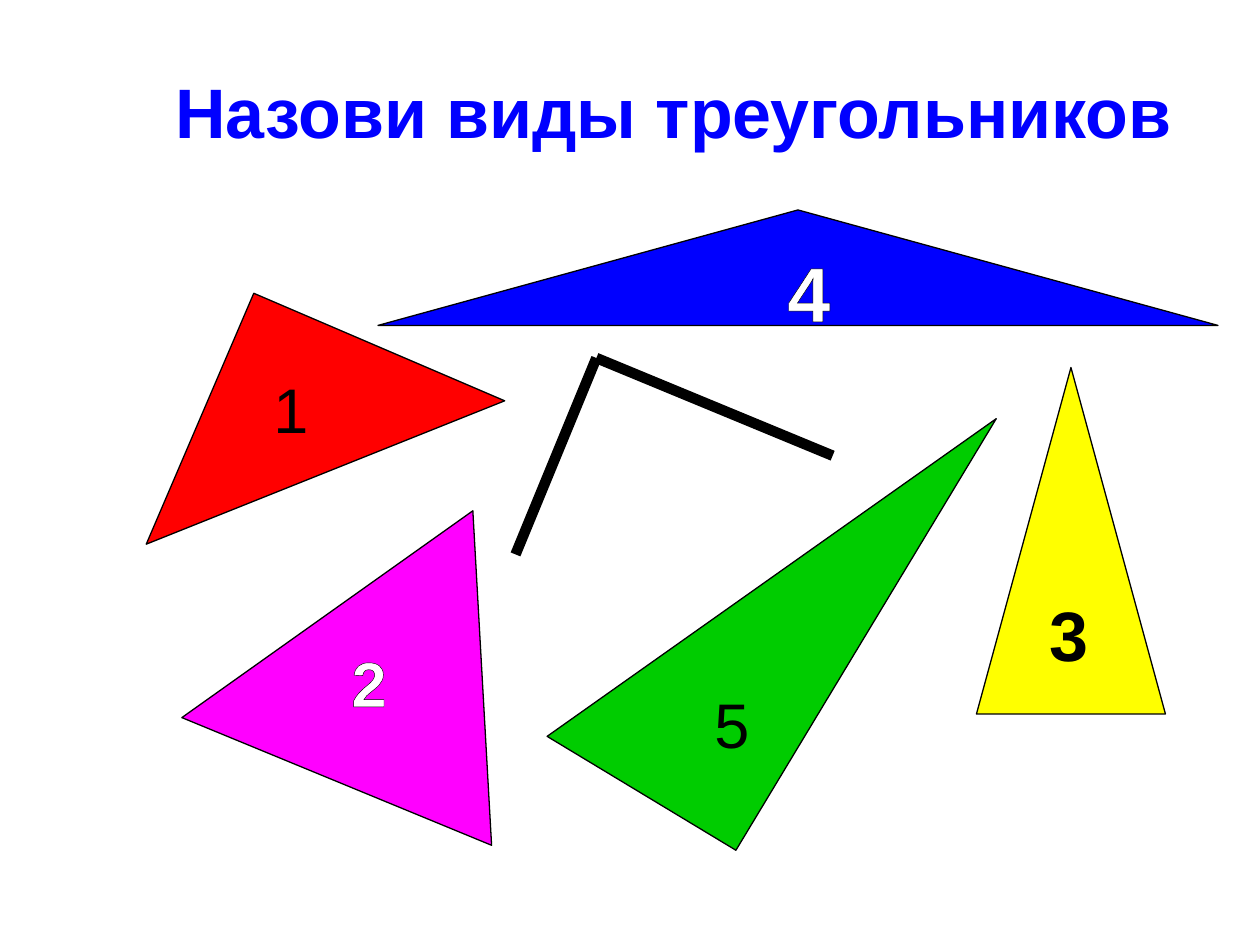
from lxml import etree
from pptx import Presentation
from pptx import util as u
from pptx.dml import color
from pptx.enum import shapes, text
from pptx.oxml import ns

COLUMNS, ROWS = 120, 90
FONT = "Arial"
TRIANGLES = [
    ("ISOSCELES_TRIANGLE", (36, 20, 80, 11), 0, "0000FF"),
    ("ISOSCELES_TRIANGLE", (93, 35, 18, 33), 0, "FFFF00"),
    ("RIGHT_TRIANGLE", (18, 32, 26, 26), 113.2, "FF0000"),
    ("RIGHT_TRIANGLE", (49.5, 44.5, 48, 21), 301.1, "00CC00"),
    ("ISOSCELES_TRIANGLE", (22, 56, 34, 27), 144.6, "FF00FF"),
]
NUMBERS = [
    ("1", (26, 34, 3.4, 6.8), 36, False, "000000"),
    ("2", (33, 60, 4.3, 7), 36, True, "FFFFFF"),
    ("3", (100, 55, 3.6, 7.4), 40, True, "000000"),
    ("4", (75, 22, 4.1, 8.3), 44, True, "FFFFFF"),
    ("5", (67, 64, 5.4, 7), 36, False, "000000"),
]
ANGLE_POINTS = [(79.3, 43.4), (56.8, 34.1), (49.1, 52.8)]


def rgb(value):
    """Return the colour for a hex string."""
    return color.RGBColor.from_string(value)


def grid(deck, lengths):
    """Turn alternating columns and rows into slide lengths."""
    units = (deck.slide_width / COLUMNS, deck.slide_height / ROWS)
    return [u.Emu(round(length * units[i % 2])) for i, length in enumerate(lengths)]


def set_font(font, size, bold, colour):
    """Apply the slide's typeface with a size, weight and colour."""
    font.name, font.size, font.bold = FONT, u.Pt(size), bold
    font.color.rgb = rgb(colour)


def set_line(line, width):
    """Make a line black with the given width in points."""
    line.color.rgb = rgb("000000")
    line.width = u.Pt(width)


def add_title(deck, page, box, words):
    """Fill and place the title placeholder."""
    title = page.shapes.title
    title.left, title.top, title.width, title.height = grid(deck, box)
    frame = title.text_frame
    frame.text = words
    frame.vertical_anchor = text.MSO_ANCHOR.MIDDLE
    frame.margin_right = u.Inches(0.41)
    para = frame.paragraphs[0]
    para.alignment = text.PP_ALIGN.CENTER
    set_font(para.font, 40, True, "0000FF")


def add_triangle(deck, page, kind, box, turn, fill):
    """Draw one outlined triangle turned about its centre."""
    preset = getattr(shapes.MSO_SHAPE, kind)
    triangle = page.shapes.add_shape(preset, *grid(deck, box))
    triangle.rotation = turn
    triangle.shadow.inherit = False
    triangle.fill.solid()
    triangle.fill.fore_color.rgb = rgb(fill)
    set_line(triangle.line, 0.75)


def add_number(deck, page, words, box, size, bold, colour):
    """Place one outlined number centred on its box."""
    frame = page.shapes.add_textbox(*grid(deck, box)).text_frame
    frame.word_wrap = False
    frame.margin_left = frame.margin_right = frame.margin_bottom = 0
    frame.margin_top = u.Inches(0.11)
    para = frame.paragraphs[0]
    para.alignment = text.PP_ALIGN.CENTER
    span = para.add_run()
    span.text = words
    set_font(span.font, size, bold, colour)
    outline = etree.Element(ns.qn("a:ln"), w=str(u.Pt(0.75)))
    fill = etree.SubElement(outline, ns.qn("a:solidFill"))
    etree.SubElement(fill, ns.qn("a:srgbClr"), val="000000")
    span.font._element.insert(0, outline) if hasattr(span.font, "_element") else span._r.get_or_add_rPr().insert(0, outline)


def add_angle(deck, page, points):
    """Draw a grouped pair of thick lines through three points."""
    group = page.shapes.add_group_shape()
    for start, end in zip(points, points[1:]):
        side = group.shapes.add_connector(
            shapes.MSO_CONNECTOR.STRAIGHT, *grid(deck, start + end))
        set_line(side.line, 6)
        etree.SubElement(side._element.spPr, ns.qn("a:effectLst"))


def main():
    """Build and save the triangle slide."""
    deck = Presentation()
    deck.slide_width, deck.slide_height = u.Inches(10), u.Inches(7.5)
    page = deck.slides.add_slide(deck.slide_layouts.get_by_name("Title Only"))
    add_title(deck, page, (12, 3, 108, 15), "Назови виды треугольников")
    for triangle in TRIANGLES:
        add_triangle(deck, page, *triangle)
    for number in NUMBERS:
        add_number(deck, page, *number)
    add_angle(deck, page, ANGLE_POINTS)
    deck.save("out.pptx")


if __name__ == "__main__":
    main()
